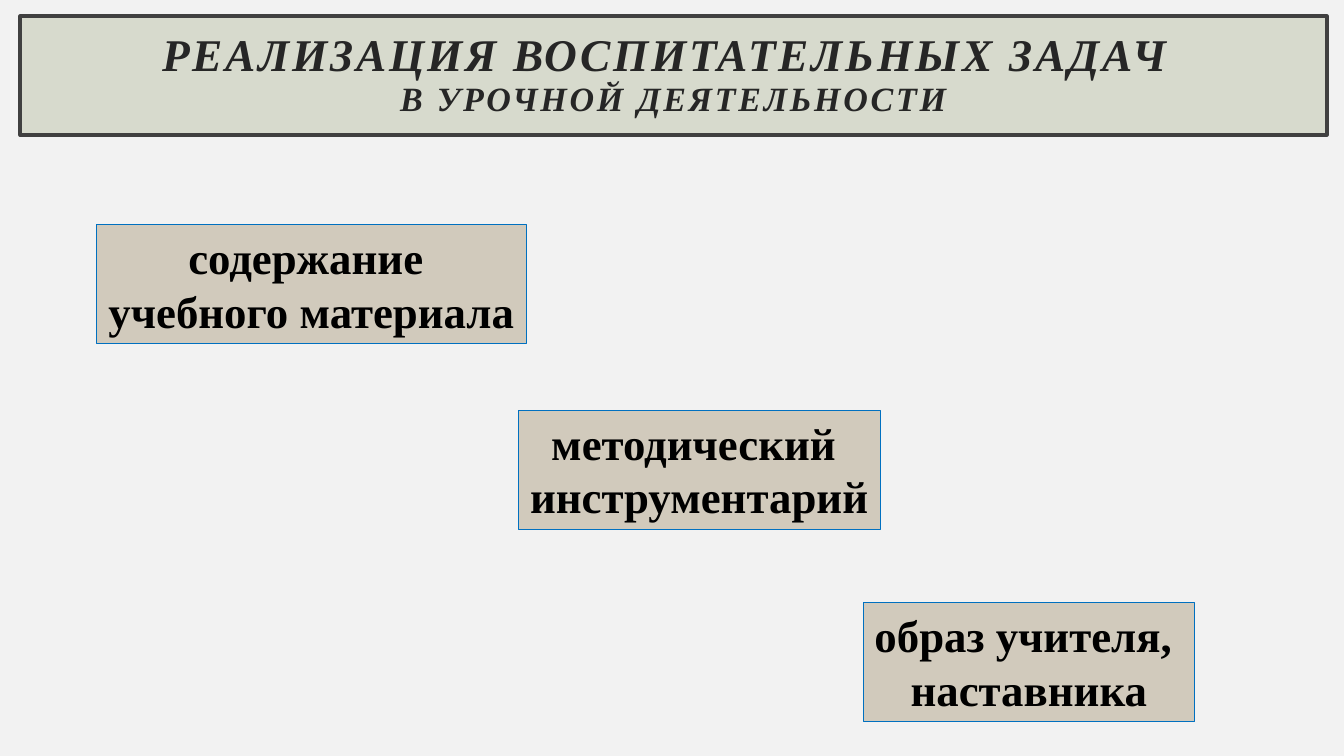
from dataclasses import dataclass

from pptx import Presentation
from pptx.dml.color import RGBColor
from pptx.enum.shapes import MSO_SHAPE
from pptx.enum.text import MSO_ANCHOR, MSO_AUTO_SIZE, PP_ALIGN
from pptx.util import Inches, Pt

RECTANGLE = MSO_SHAPE.RECTANGLE
MIDDLE = MSO_ANCHOR.MIDDLE
GROW = MSO_AUTO_SIZE.SHAPE_TO_FIT_TEXT
CENTER = PP_ALIGN.CENTER
FONT = "Times New Roman"


@dataclass
class Aspect:
    left: float
    top: float
    width: float
    text: str


ASPECTS = [
    Aspect(0.96, 2.23, 4.26, "содержание \nучебного материала"),
    Aspect(5.14, 4.07, 3.59, "методический \nинструментарий"),
    Aspect(8.56, 5.98, 3.29, "образ учителя, \nнаставника"),
]
BOX_HEIGHT = 1.18


def color(value: str) -> RGBColor:
    return RGBColor.from_string(value)


def paint(shape, fill: str, line: str, line_width: float) -> None:
    shape.fill.solid()
    shape.fill.fore_color.rgb = color(fill)
    shape.line.color.rgb = color(line)
    shape.line.width = Pt(line_width)


def style_font(font, size: float, ink: str, italic: bool = False) -> None:
    font.name = FONT
    font.size = Pt(size)
    font.bold = True
    font.italic = italic
    font.color.rgb = color(ink)


def draw_title(page) -> None:
    box = page.shapes.add_shape(
        RECTANGLE, Inches(0.2), Inches(0.16), Inches(12.96), Inches(BOX_HEIGHT)
    )
    box.shadow.inherit = False
    paint(box, "D7DACD", "404040", 2.5)
    frame = box.text_frame
    frame.word_wrap = True
    frame.vertical_anchor = MIDDLE
    frame.margin_left = frame.margin_right = Inches(0.2)
    frame.margin_top = frame.margin_bottom = Inches(0.2)
    para = frame.paragraphs[0]
    para.text = "РЕАЛИЗАЦИЯ ВОСПИТАТЕЛЬНЫХ ЗАДАЧ \vВ УРОЧНОЙ ДЕЯТЕЛЬНОСТИ"
    para.alignment = CENTER
    para.line_spacing = 0.9
    for span, size in zip(para.runs, (32.4, 24.3)):
        style_font(span.font, size, "262626", italic=True)
        # Letter spacing in hundredths of a point
        span._r.get_or_add_rPr().set("spc", "200")


def draw_aspect(page, aspect: Aspect) -> None:
    box = page.shapes.add_textbox(
        Inches(aspect.left), Inches(aspect.top),
        Inches(aspect.width), Inches(BOX_HEIGHT),
    )
    paint(box, "D1CABC", "0070C0", 0.75)
    frame = box.text_frame
    frame.word_wrap = False
    frame.auto_size = GROW
    frame.text = aspect.text
    for para in frame.paragraphs:
        para.alignment = CENTER
        for span in para.runs:
            style_font(span.font, 32, "000000")


def main() -> None:
    deck = Presentation()
    deck.slide_width = Inches(13.33)
    deck.slide_height = Inches(7.5)
    page = deck.slides.add_slide(deck.slide_layouts[6])

    # Background
    page.background.fill.solid()
    page.background.fill.fore_color.rgb = color("F2F2F2")

    # Title banner and the three descending boxes
    draw_title(page)
    for aspect in ASPECTS:
        draw_aspect(page, aspect)

    deck.save("out.pptx")


if __name__ == "__main__":
    main()
